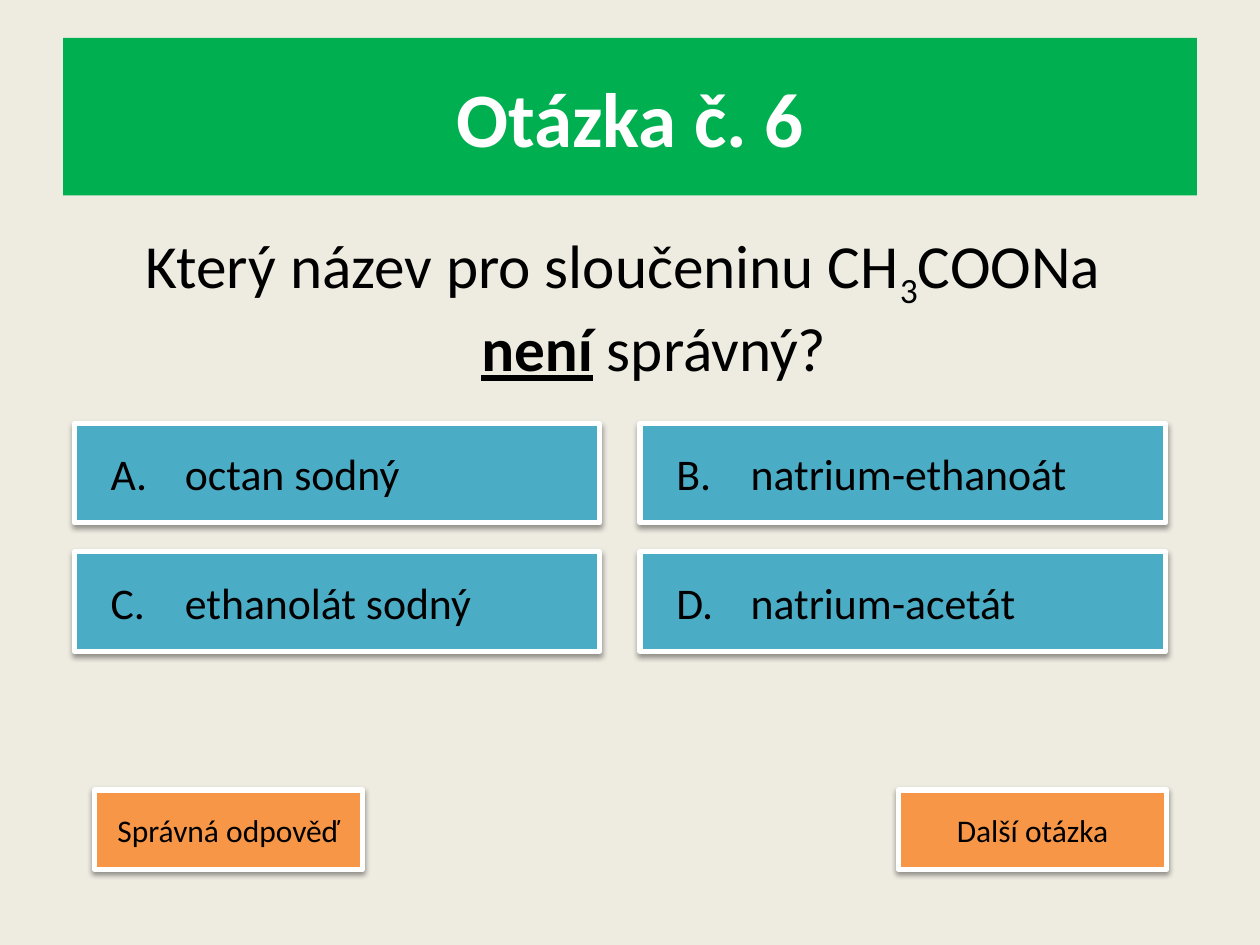
import pptx
import pptx.util
import pptx.dml.color
import pptx.enum.shapes
import pptx.enum.text
import pptx.oxml
import pptx.oxml.ns
from lxml import etree

Inches = pptx.util.Inches
Pt = pptx.util.Pt
qn = pptx.oxml.ns.qn
ALIGN = pptx.enum.text.PP_ALIGN
MIDDLE = pptx.enum.text.MSO_ANCHOR.MIDDLE
BLACK, WHITE = "000000", "FFFFFF"
GREEN, BLUE, ORANGE, CREAM = "00B050", "4BACC6", "F79646", "EEECE1"


def paint(color_format, value):
    color_format.rgb = pptx.dml.color.RGBColor.from_string(value)


def fill_with(fill, value):
    fill.solid()
    paint(fill.fore_color, value)


def write(paragraph, text, size=35, color=BLACK, bold=False, underline=False,
          baseline=None, align=None):
    run = paragraph.add_run()
    run.text = text
    font = run.font
    font.name, font.size = "Calibri", Pt(size)
    font.bold, font.underline = bold, underline
    paint(font.color, color)
    if baseline is not None:
        run._r.get_or_add_rPr().set("baseline", str(baseline * 1000))
    if align is not None:
        paragraph.alignment = align


def place(part, box):
    part.left, part.top, part.width, part.height = map(Inches, box)


def set_tabs(paragraph, stops):
    properties = paragraph._p.get_or_add_pPr()
    tabs = etree.SubElement(properties, qn("a:tabLst"))
    for stop in stops:
        etree.SubElement(tabs, qn("a:tab"), pos=str(Inches(stop)), algn="l")


def cast_shadow(card):
    card.shadow.inherit = False
    effects = card._element.spPr.find(qn("a:effectLst"))
    shadow = etree.SubElement(effects, qn("a:outerShdw"), blurRad=str(Pt(3.1)),
                              dist=str(Pt(1.6)), dir="5400000", rotWithShape="0")
    tone = etree.SubElement(shadow, qn("a:srgbClr"), val=BLACK)
    etree.SubElement(tone, qn("a:alpha"), val="38000")


def add_card(slide, box, color, text, tabs=(), **text_format):
    rectangle = pptx.enum.shapes.MSO_SHAPE.RECTANGLE
    card = slide.shapes.add_shape(rectangle, *map(Inches, box))
    fill_with(card.fill, color)
    paint(card.line.color, WHITE)
    card.line.width = Pt(3)
    cast_shadow(card)
    frame = card.text_frame
    frame.word_wrap = True
    frame.vertical_anchor = MIDDLE
    paragraph = frame.paragraphs[0]
    write(paragraph, text, **text_format)
    if tabs:
        set_tabs(paragraph, tabs)


def add_heading(slide, box, text):
    heading = slide.shapes.title
    place(heading, box)
    fill_with(heading.fill, GREEN)
    heading.text_frame.vertical_anchor = MIDDLE
    write(heading.text_frame.paragraphs[0], text, size=44, color=WHITE,
          bold=True, align=ALIGN.CENTER)


def add_question(slide, box):
    question = slide.placeholders[1]
    place(question, box)
    question.text_frame.auto_size = pptx.enum.text.MSO_AUTO_SIZE.NONE
    paragraph = question.text_frame.paragraphs[0]
    properties = paragraph._p.get_or_add_pPr()
    properties.set("marL", str(Inches(0.38)))
    properties.set("indent", str(Inches(-0.38)))
    etree.SubElement(properties, qn("a:buNone"))
    write(paragraph, "Který název pro sloučeninu CH", align=ALIGN.CENTER)
    write(paragraph, "3", baseline=-25)
    write(paragraph, "COONa ")
    paragraph.add_line_break()
    write(paragraph, "není", bold=True, underline=True)
    write(paragraph, " správný?")


def add_answers(slide, box, answers, columns=2, card_width=4.17, card_height=0.79):
    left, top, width, height = box
    rows = len(answers) // columns
    column_step = (width - card_width) / (columns - 1)
    row_step = (height - card_height) / (rows - 1)
    for index, answer in enumerate(answers):
        row, column = divmod(index, columns)
        card_box = (left + column * column_step, top + row * row_step,
                    card_width, card_height)
        add_card(slide, card_box, BLUE, f"\t{'ABCD'[index]}.\t{answer}",
                 tabs=(0.19, 0.78), size=25, align=ALIGN.LEFT)


def add_navigation(slide, box, labels, button_width=2.13):
    left, top, width, height = box
    step = (width - button_width) / (len(labels) - 1)
    for index, label in enumerate(labels):
        add_card(slide, (left + index * step, top, button_width, height),
                 ORANGE, label, size=18, align=ALIGN.CENTER)


def main():
    quiz = pptx.Presentation()
    quiz.slide_width, quiz.slide_height = Inches(10), Inches(7.5)
    slide = quiz.slides.add_slide(quiz.slide_layouts[1])
    fill_with(slide.background.fill, CREAM)
    add_heading(slide, (0.5, 0.3, 9, 1.25), "Otázka č. 6")
    add_question(slide, (0.5, 1.75, 9, 4.52))
    add_answers(slide, (0.59, 3.36, 8.66, 1.81),
                ("octan sodný", "natrium-ethanoát", "ethanolát sodný", "natrium-acetát"))
    add_navigation(slide, (0.75, 6.27, 8.51, 0.63), ("Správná odpověď", "Další otázka"))
    quiz.save("out.pptx")


if __name__ == "__main__":
    main()
